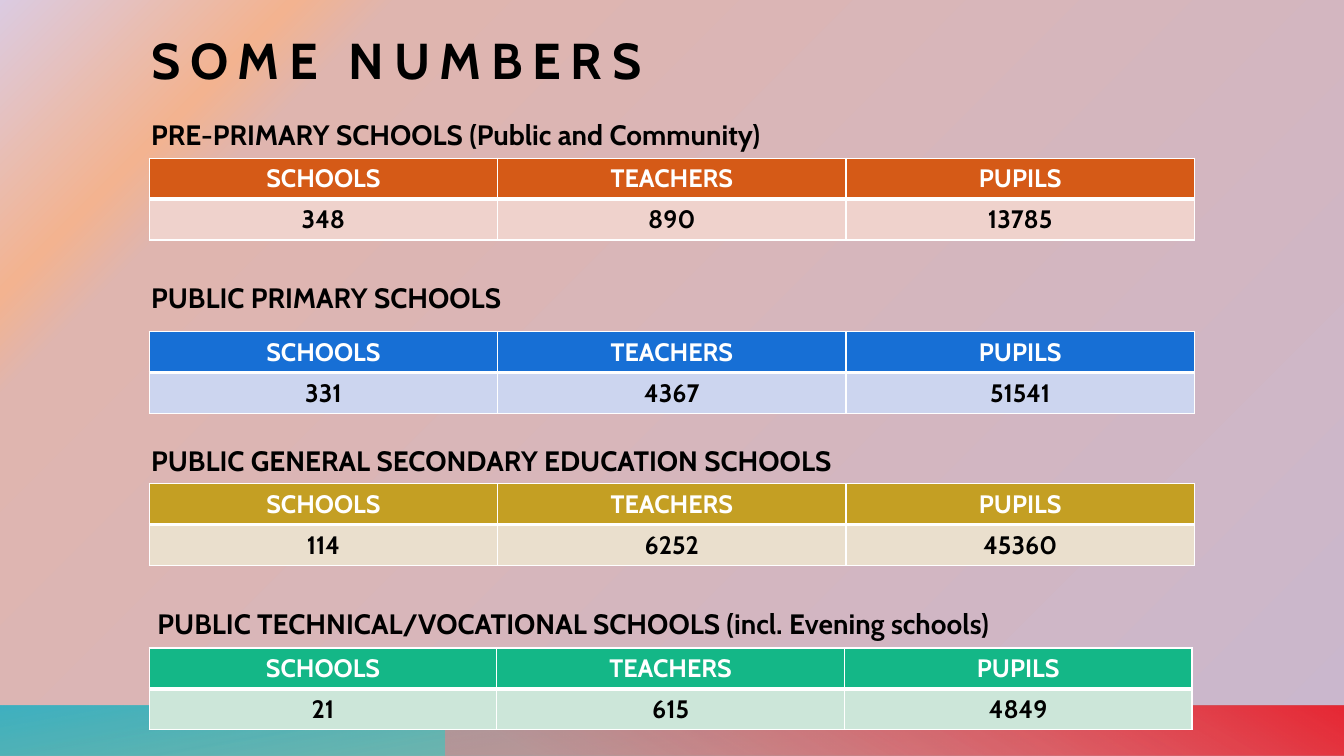
from dataclasses import dataclass

from lxml.etree import SubElement
from pptx import Presentation
from pptx.dml.color import RGBColor
from pptx.enum.shapes import MSO_SHAPE as Preset
from pptx.enum.text import MSO_ANCHOR as Anchor, MSO_AUTO_SIZE as AutoSize, PP_ALIGN as Align
from pptx.oxml import parse_xml
from pptx.oxml.ns import nsdecls, qn
from pptx.util import Cm, Pt

FONT = "Cabin"
COLORS = {
    "black": "000000", "white": "FFFFFF",
    "mauve": "CAB7CD", "rose": "DFB5AF", "peach": "F3B390", "lilac": "DBCBE1",
    "teal": "23B0C4", "pink": "F17F86", "red": "E72935",
    "orange": "D55A17", "pale orange": "EFD2CC",
    "blue": "176FD5", "pale blue": "CCD5EF",
    "gold": "C49F23", "pale gold": "EADFCD",
    "green": "14B787", "pale green": "CCE6D9",
}
COLUMN_NAMES = ("SCHOOLS", "TEACHERS", "PUPILS")
SLIDE_WIDTH, SLIDE_HEIGHT = 33.87, 19.05
TEXT_LEFT, TEXT_WIDTH = 3.81, 28.45
HEADING_TOP, HEADING_STEP, HEADING_HEIGHT = 2.88, 4.11, 1.0
TABLE_LEFT, ROW_HEIGHT = 3.76, 1.03
BAR_HEIGHT = 1.27
THIN, THICK = 1, 3


@dataclass
class Stop:
    position: int
    color: str
    opacity: int = 100


@dataclass
class Bar:
    left: float
    rotation: int
    angle: int
    stops: tuple[Stop, ...]


@dataclass
class Section:
    heading: str
    table_top: float
    color: str
    values: tuple[int, int, int]
    heading_left: float = TEXT_LEFT
    column_width: float = 8.78


BACKGROUND_STOPS = (Stop(0, "mauve"), Stop(81, "rose"), Stop(86, "peach"), Stop(100, "lilac"))
BARS = (
    Bar(0, 180, 100, (Stop(14, "green", 28), Stop(100, "teal", 85))),
    Bar(11.22, 0, 240, (Stop(9, "pink", 55), Stop(99, "red"))),
)
SECTIONS = (
    Section("PRE-PRIMARY SCHOOLS (Public and Community)", 3.99, "orange", (348, 890, 13785)),
    Section("PUBLIC PRIMARY SCHOOLS", 8.36, "blue", (331, 4367, 51541)),
    Section("PUBLIC GENERAL SECONDARY EDUCATION SCHOOLS", 12.19, "gold", (114, 6252, 45360)),
    Section("PUBLIC TECHNICAL/VOCATIONAL SCHOOLS (incl. Evening schools)", 16.33, "green",
            (21, 615, 4849), heading_left=3.97, column_width=8.76),
)


def rgb(name: str) -> RGBColor:
    return RGBColor.from_string(COLORS[name])


def replace_solid_fill(properties, stops: tuple[Stop, ...], direction: str) -> None:
    """Swap the solid fill for a gradient; direction is its a:lin or a:path element."""
    stop_xml = "".join(
        f'<a:gs pos="{stop.position * 1000}"><a:srgbClr val="{COLORS[stop.color]}">'
        f'<a:alpha val="{stop.opacity * 1000}"/></a:srgbClr></a:gs>'
        for stop in stops
    )
    gradient = parse_xml(
        f'<a:gradFill {nsdecls("a")} rotWithShape="1"><a:gsLst>{stop_xml}</a:gsLst>'
        f"{direction}</a:gradFill>"
    )
    properties.replace(properties.find(qn("a:solidFill")), gradient)


def paint_background(slide) -> None:
    slide.background.fill.solid()
    slide.background.fill.fore_color.rgb = rgb("rose")
    properties = slide.element.find(".//" + qn("p:bgPr"))
    corner = '<a:path path="circle"><a:fillToRect l="100000" t="100000"/></a:path>'
    replace_solid_fill(properties, BACKGROUND_STOPS, corner)


def add_bar(slide, bar: Bar) -> None:
    shape = slide.shapes.add_shape(
        Preset.RECTANGLE, Cm(bar.left), Cm(SLIDE_HEIGHT - BAR_HEIGHT),
        Cm(SLIDE_WIDTH - bar.left), Cm(BAR_HEIGHT))
    shape.shadow.inherit = False
    shape.line.fill.background()
    shape.rotation = bar.rotation
    properties = shape.element.spPr
    properties.find(qn("a:xfrm")).set("flipH", "1")
    shape.fill.solid()
    replace_solid_fill(properties, bar.stops, f'<a:lin ang="{bar.angle * 60000}" scaled="0"/>')


def add_bold_run(paragraph, text: str, size: int, color: str = "black"):
    run = paragraph.add_run()
    run.text = text
    run.font.name = FONT
    run.font.size = Pt(size)
    run.font.bold = True
    run.font.color.rgb = rgb(color)
    return run


def prepare_frame(shape, anchor: Anchor):
    frame = shape.text_frame
    frame.word_wrap = True
    frame.auto_size = AutoSize.NONE
    frame.vertical_anchor = anchor
    frame.margin_left = frame.margin_top = frame.margin_right = frame.margin_bottom = 0
    frame.paragraphs[0].alignment = Align.LEFT
    return frame


def fill_title(slide) -> None:
    title = slide.shapes.title
    title.left, title.top = Cm(TEXT_LEFT), Cm(0.25)
    title.width, title.height = Cm(TEXT_WIDTH), Cm(2.01)
    frame = prepare_frame(title, Anchor.BOTTOM)
    run = add_bold_run(frame.paragraphs[0], "SOME NUMBERS", 36)
    run.font._element.set("spc", "700")


def add_heading(slide, section: Section, index: int) -> None:
    box = slide.shapes.add_textbox(
        Cm(section.heading_left), Cm(HEADING_TOP + index * HEADING_STEP),
        Cm(TEXT_WIDTH), Cm(HEADING_HEIGHT))
    frame = prepare_frame(box, Anchor.MIDDLE)
    add_bold_run(frame.paragraphs[0], section.heading, 20)


def add_borders(cell, top: int, bottom: int) -> None:
    properties = cell._tc.get_or_add_tcPr()
    for side, width in (("L", THIN), ("R", THIN), ("T", top), ("B", bottom)):
        line = SubElement(properties, qn(f"a:ln{side}"), w=str(Pt(width)))
        fill = SubElement(line, qn("a:solidFill"))
        SubElement(fill, qn("a:srgbClr"), val=COLORS["white"])


def add_numbers_table(slide, section: Section) -> None:
    rows = (
        (COLUMN_NAMES, section.color, "white", THIN, THICK),
        (section.values, f"pale {section.color}", "black", THICK, THIN),
    )
    table = slide.shapes.add_table(
        len(rows), len(COLUMN_NAMES), Cm(TABLE_LEFT), Cm(section.table_top),
        Cm(section.column_width * len(COLUMN_NAMES)), Cm(ROW_HEIGHT * len(rows))).table
    for column in table.columns:
        column.width = Cm(section.column_width)
    for row_index, (texts, fill, text_color, top, bottom) in enumerate(rows):
        for column_index, text in enumerate(texts):
            cell = table.cell(row_index, column_index)
            add_borders(cell, top, bottom)
            cell.fill.solid()
            cell.fill.fore_color.rgb = rgb(fill)
            paragraph = cell.text_frame.paragraphs[0]
            paragraph.alignment = Align.CENTER
            add_bold_run(paragraph, str(text), 18, text_color)


def main() -> None:
    presentation = Presentation()
    presentation.slide_width, presentation.slide_height = Cm(SLIDE_WIDTH), Cm(SLIDE_HEIGHT)
    slide = presentation.slides.add_slide(presentation.slide_layouts.get_by_name("Title Only"))
    paint_background(slide)
    for bar in BARS:
        add_bar(slide, bar)
    fill_title(slide)
    for index, section in enumerate(SECTIONS):
        add_heading(slide, section, index)
        add_numbers_table(slide, section)
    presentation.save("out.pptx")


if __name__ == "__main__":
    main()
